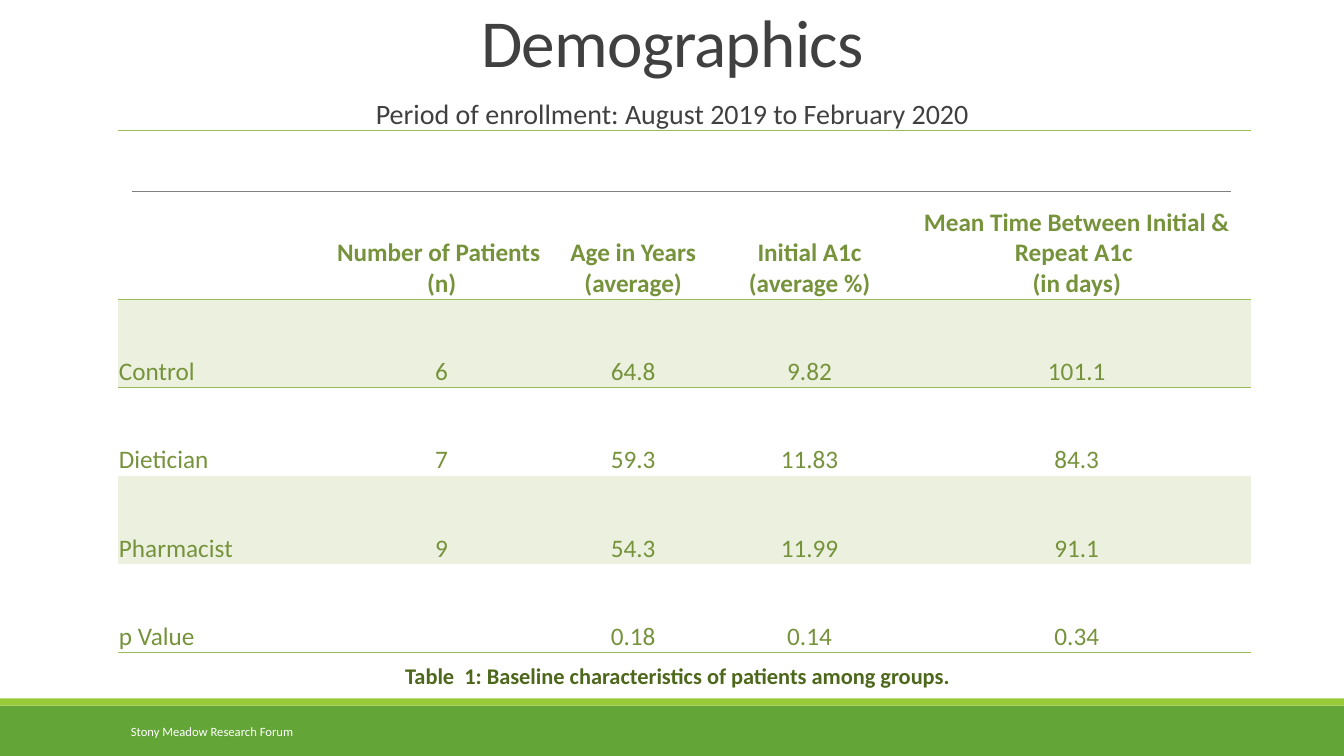
"""Build the demographics slide with its baseline characteristics table."""
from dataclasses import dataclass, field

from lxml.etree import SubElement
from pptx import Presentation
from pptx.dml.color import RGBColor
from pptx.enum.shapes import MSO_CONNECTOR, MSO_SHAPE
from pptx.enum.text import MSO_ANCHOR, PP_ALIGN
from pptx.oxml.ns import qn
from pptx.util import Inches, Pt

GREEN = RGBColor(0x63, 0xA5, 0x37)
LIME = RGBColor(0x99, 0xCB, 0x38)
GRAY = RGBColor(0x80, 0x80, 0x80)
DARK = RGBColor(0x40, 0x40, 0x40)
WHITE = RGBColor(0xFF, 0xFF, 0xFF)
MOSS = RGBColor(0x4D, 0x67, 0x1B)
OLIVE = RGBColor(0x76, 0x93, 0x3C)
BAND = RGBColor(0xEB, 0xF1, 0xDE)
EDGE = RGBColor(0x9B, 0xBB, 0x59)
FONT = "Calibri"
PLAIN = "{2D5ABB26-0587-4C30-8999-92F81FD0307C}"

COLS = (2.14, 2.14, 1.66, 1.84, 3.46)
HEAD = 1.68
ROW = 0.875
CELLS = (
    ("", "Number of Patients \n(n)", "Age in Years\n(average)", "Initial A1c\v(average %)",
     "Mean Time Between Initial & Repeat A1c \n(in days)"),
    ("Control", "6", "64.8", "9.82", "101.1"),
    ("Dietician", "7", "59.3", "11.83", "84.3"),
    ("Pharmacist", "9", "54.3", "11.99", "91.1"),
    ("p Value", "", "0.18", "0.14", "0.34"),
)


@dataclass
class Bar:
    top: float
    height: float
    color: RGBColor


@dataclass
class Label:
    text: str
    box: tuple[float, float, float, float]
    size: float
    color: RGBColor
    bold: bool = False
    track: int = 0
    frame: dict = field(default_factory=dict)
    para: dict = field(default_factory=dict)


BARS = (Bar(7, 0.5, GREEN), Bar(6.93, 0.07, LIME))
MID = {"alignment": PP_ALIGN.CENTER}
LABELS = (
    Label("Demographics", (1.17, -0.74, 11, 1.59), 48, DARK, track=-50,
          frame={"vertical_anchor": MSO_ANCHOR.BOTTOM}, para=MID | {"line_spacing": 0.85}),
    Label("Period of enrollment: August 2019 to February 2020", (3.54, 0.95, 6.26, 4.4), 20, DARK,
          frame={"margin_left": 0, "margin_right": 0},
          para=MID | {"line_spacing": 0.9, "space_before": Pt(12), "space_after": Pt(2)}),
    Label("Stony Meadow Research Forum", (1.2, 7.06, 2.7, 0.4), 9, WHITE,
          frame={"vertical_anchor": MSO_ANCHOR.MIDDLE}),
    Label("Table  1: Baseline characteristics of patients among groups.", (3.92, 6.52, 6, 0.37),
          16, MOSS, bold=True),
)


def style(item, values: dict) -> None:
    """Set each named value on the item."""
    for name, value in values.items():
        setattr(item, name, value)


def write(frame, text: str, size: float, color: RGBColor, bold: bool, para: dict) -> None:
    """Fill a text frame and format its paragraphs and runs."""
    frame.text = text
    for line in frame.paragraphs:
        style(line, para)
        for run in line.runs:
            style(run.font, {"name": FONT, "size": Pt(size), "bold": bold})
            run.font.color.rgb = color


def draw_bar(slide, bar: Bar) -> None:
    """Draw one full-width footer bar."""
    shape = slide.shapes.add_shape(
        MSO_SHAPE.RECTANGLE, 0, Inches(bar.top), Inches(13.33), Inches(bar.height))
    shape.shadow.inherit = False
    shape.fill.solid()
    shape.fill.fore_color.rgb = bar.color
    shape.line.fill.background()


def draw_rule(slide) -> None:
    """Draw the thin gray rule."""
    rule = slide.shapes.add_connector(
        MSO_CONNECTOR.STRAIGHT, Inches(1.31), Inches(1.9), Inches(12.21), Inches(1.9))
    rule.line.color.rgb = GRAY
    rule.line.width = Pt(0.5)
    SubElement(rule._element.spPr, qn("a:effectLst"))


def draw_label(slide, label: Label) -> None:
    """Draw one text box."""
    frame = slide.shapes.add_textbox(*map(Inches, label.box)).text_frame
    style(frame, {"word_wrap": True} | label.frame)
    write(frame, label.text, label.size, label.color, label.bold, label.para)
    if label.track:
        frame.paragraphs[0].runs[0]._r.get_or_add_rPr().set("spc", str(label.track))


def add_edge(cell, side: str) -> None:
    """Add a thin green border to one side of a cell."""
    line = SubElement(cell._tc.get_or_add_tcPr(), qn(f"a:ln{side}"), w=str(Pt(0.5)))
    SubElement(SubElement(line, qn("a:solidFill")), qn("a:srgbClr"), val=str(EDGE))


def draw_table(slide) -> None:
    """Draw the table of patient groups."""
    last = len(CELLS) - 1
    table = slide.shapes.add_table(
        len(CELLS), len(COLS), Inches(1.17), Inches(1.29),
        Inches(sum(COLS)), Inches(HEAD + ROW * last)).table
    style(table, {"first_row": False, "horz_banding": False})
    table._tbl.tblPr.find(qn("a:tableStyleId")).text = PLAIN
    for col, width in zip(table.columns, COLS):
        col.width = Inches(width)
    for r, texts in enumerate(CELLS):
        table.rows[r].height = Inches(ROW if r else HEAD)
        for c, text in enumerate(texts):
            cell = table.cell(r, c)
            style(cell, {"vertical_anchor": MSO_ANCHOR.BOTTOM, "margin_left": Inches(0.01),
                         "margin_right": Inches(0.01), "margin_top": Inches(0.01),
                         "margin_bottom": 0})
            write(cell.text_frame, text, 18, OLIVE, r == 0, MID if c else {})
            if r < 2:
                add_edge(cell, "T")
            if r in (0, last):
                add_edge(cell, "B")
            if r % 2:
                cell.fill.solid()
                cell.fill.fore_color.rgb = BAND
            else:
                cell.fill.background()


def main() -> None:
    """Build and save the slide."""
    deck = Presentation()
    style(deck, {"slide_width": Inches(13.33), "slide_height": Inches(7.5)})
    slide = deck.slides.add_slide(deck.slide_layouts[6])
    for bar in BARS:
        draw_bar(slide, bar)
    draw_rule(slide)
    for label in LABELS:
        draw_label(slide, label)
    draw_table(slide)
    deck.save("out.pptx")


if __name__ == "__main__":
    main()
